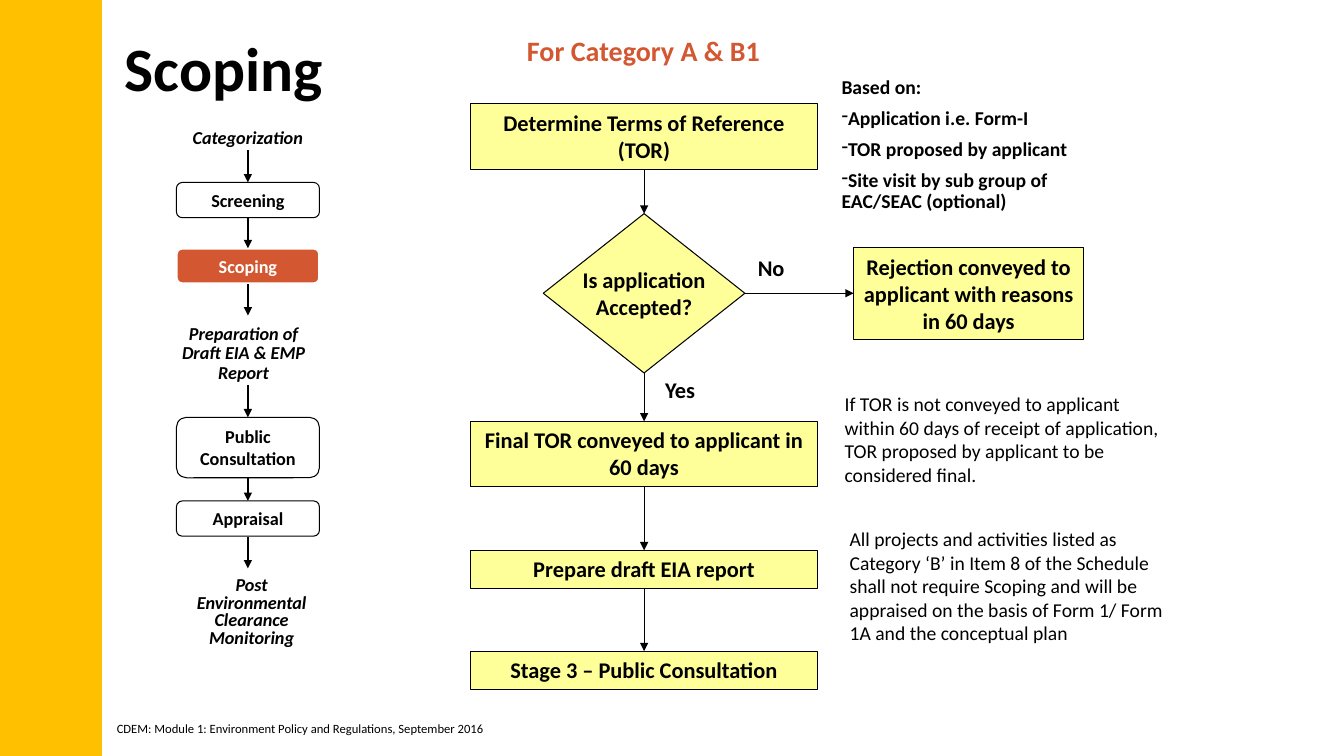
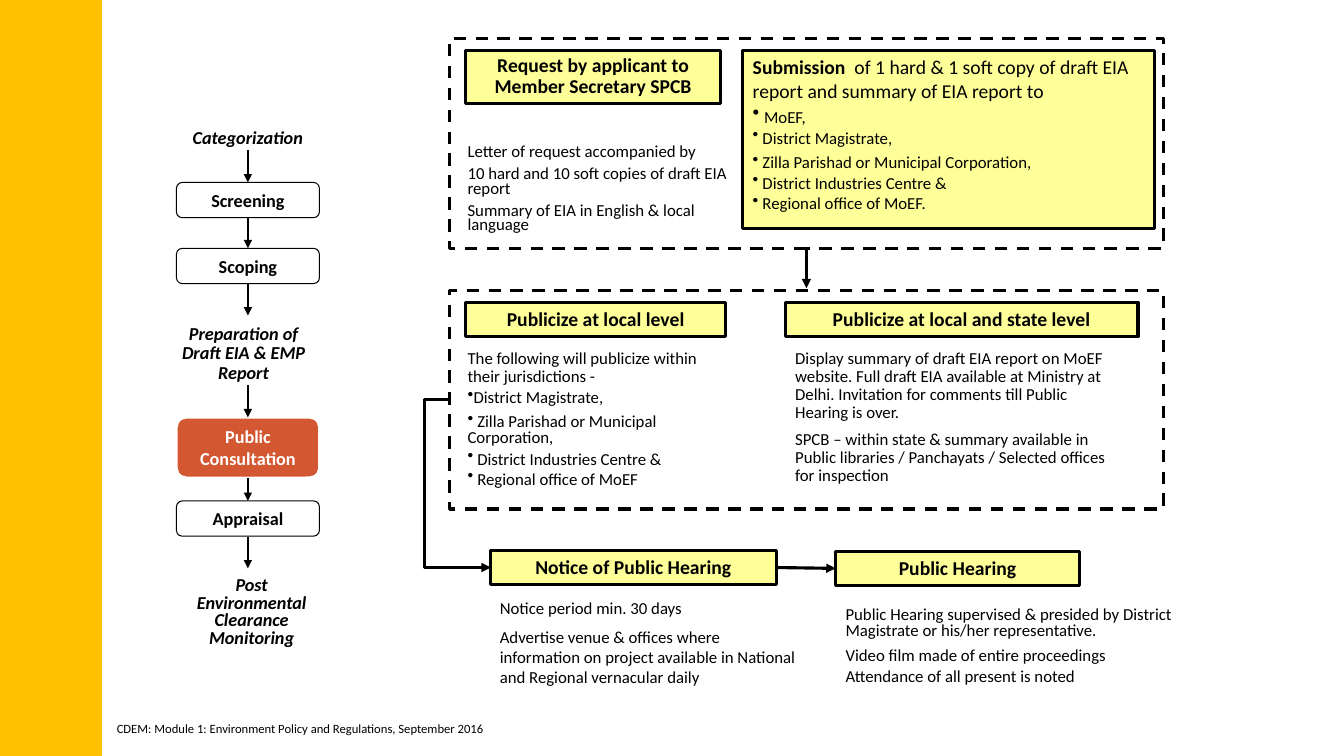
"""Build two slides on scoping and public consultation for clearance."""
from dataclasses import dataclass, replace
from itertools import pairwise
from typing import Any

from lxml.etree import SubElement as Sub
from pptx import Presentation
from pptx.dml.color import RGBColor as Rgb
from pptx.enum.dml import MSO_LINE as Dash
from pptx.enum.shapes import MSO_CONNECTOR as Link, MSO_SHAPE as Kind
from pptx.enum.text import MSO_ANCHOR as Anchor, PP_ALIGN as Align
from pptx.oxml.ns import qn
from pptx.util import Pt

HUES = {"ink": "000000", "white": "FFFFFF", "gold": "FFC000",
        "rust": "D35731", "pale": "FFFF99"}
FONT = "Calibri"


@dataclass(frozen=True)
class Look:
    size: float
    bold: bool = False
    italic: bool = False
    hue: str = "ink"
    align: Any = Align.LEFT


@dataclass(frozen=True)
class Skin:
    fill: str = ""
    edge: str = ""
    width: float = 0.75
    dash: Any = None


@dataclass(frozen=True)
class Lead:
    text: str
    size: float
    bold: bool = False


@dataclass(frozen=True)
class Para:
    text: str
    pitch: float = 1.0
    mark: str = ""
    lead: Lead | None = None
    size: float = 0


@dataclass(frozen=True)
class Box:
    left: float
    top: float
    width: float
    height: float

    @property
    def base(self) -> float:
        return self.top + self.height

    @property
    def right(self) -> float:
        return self.left + self.width

    @property
    def mid(self) -> float:
        return self.left + self.width / 2

    def lay(self) -> list[Pt]:
        return [Pt(v) for v in (self.left, self.top, self.width, self.height)]


@dataclass(frozen=True)
class Step:
    text: str
    box: Box
    pitch: float = 1.0
    plain: bool = False


NODE = Look(16, bold=True, align=Align.CENTER)
HEAD = replace(NODE, size=14)
STEP = replace(NODE, size=13)
NOTE = Look(14)
TINY = Look(12)
CLEAR = Skin()
THIN = Skin("pale", "ink")
THICK = Skin("pale", "ink", 2.25)
FRAME = Skin("", "ink", 2.25, Dash.DASH)
RING = Skin("", "ink")
HOT = Skin("rust", "white", 1.75)

STEPS = [
    Step("Categorization", Box(120, 88.6, 114, 22.3), 0.8, True),
    Step("Screening", Box(126, 130.3, 102.2, 25.2)),
    Step("Scoping", Box(126, 177.4, 102.2, 25.2)),
    Step("Preparation of Draft EIA & EMP Report", Box(120, 225.4, 108, 55.4), 0.9, True),
    Step("Public Consultation", Box(126, 298.1, 102.2, 43.2)),
    Step("Appraisal", Box(126, 357.8, 102.2, 25.2)),
    Step("Post Environmental Clearance Monitoring", Box(120, 406, 119.5, 64), 0.8, True),
]
STEMS = [(107.3, 130.3), (155.5, 177.3), (203, 225.4), (275, 298.1),
         (341.3, 357.8), (383.8, 406)]


def tint(name: str) -> Rgb:
    return Rgb.from_string(HUES[name])


def apply(item: Any, **form: Any) -> None:
    for key, val in form.items():
        setattr(item, key, val)


def write(frame: Any, paras: list[Para], look: Look) -> None:
    for num, para in enumerate(paras):
        line = frame.paragraphs[0] if num == 0 else frame.add_paragraph()
        size = para.size or look.size
        runs = [Lead(para.text, size, look.bold)]
        if para.lead:
            runs.insert(0, para.lead)
        apply(line, alignment=look.align, line_spacing=para.pitch,
              space_before=Pt(runs[0].size / 2 if num else 0))
        if para.mark:
            Sub(line._p.get_or_add_pPr(), qn("a:buChar"), char=para.mark)
        for part in runs:
            run = line.add_run()
            run.text = part.text
            apply(run.font, name=FONT, size=Pt(part.size), bold=part.bold,
                  italic=look.italic)
            run.font.color.rgb = tint(look.hue)


def label(slide: Any, box: Box, paras: list[Para], look: Look, wrap: bool = True) -> Any:
    shape = slide.shapes.add_textbox(*box.lay())
    shape.text_frame.word_wrap = wrap
    write(shape.text_frame, paras, look)
    return shape


def block(slide: Any, box: Box, skin: Skin, paras: list[Para], look: Look = NODE,
          kind: Any = Kind.RECTANGLE, anchor: Any = Anchor.TOP, wrap: bool = True) -> Any:
    shape = slide.shapes.add_shape(kind, *box.lay())
    shape.shadow.inherit = False
    if skin.fill:
        shape.fill.solid()
        shape.fill.fore_color.rgb = tint(skin.fill)
    else:
        shape.fill.background()
    if skin.edge:
        shape.line.color.rgb = tint(skin.edge)
        apply(shape.line, width=Pt(skin.width), dash_style=skin.dash)
    else:
        shape.line.fill.background()
    apply(shape.text_frame, word_wrap=wrap, vertical_anchor=anchor)
    write(shape.text_frame, paras, look)
    return shape


def arrow(slide: Any, start: tuple[float, float], end: tuple[float, float],
          width: float = 0.75, bend: int | None = None) -> None:
    kind = Link.STRAIGHT if bend is None else Link.ELBOW
    link = slide.shapes.add_connector(kind, *(Pt(v) for v in start + end))
    link.line.color.rgb = tint("ink")
    link.line.width = Pt(width)
    props = link.element.spPr
    Sub(props.find(qn("a:ln")), qn("a:tailEnd"), type="triangle")
    Sub(props, qn("a:effectLst"))
    if bend is not None:
        geom = props.find(qn("a:prstGeom"))
        vals = geom.find(qn("a:avLst"))
        if vals is None:
            vals = Sub(geom, qn("a:avLst"))
        Sub(vals, qn("a:gd"), name="adj1", fmla=f"val {bend}")


def brand(deck: Any, slide: Any) -> None:
    foot = "CDEM: Module 1: Environment Policy and Regulations, September 2016"
    parts = [
        block(slide, Box(0, 0, 72.7, 540), Skin("gold"), []),
        label(slide, Box(76.3, 511.2, 281.5, 18), [Para(foot)], Look(9), wrap=False),
    ]
    tree = deck.slide_master.shapes.element
    for num, part in enumerate(parts, 2):
        tree.insert(num, part.element)


def track(slide: Any, stage: str) -> None:
    for step in STEPS:
        skin, look = RING, STEP
        if step.plain:
            skin, look = CLEAR, replace(STEP, italic=True)
        elif step.text == stage:
            skin, look = HOT, replace(STEP, hue="white")
        block(slide, step.box, skin, [Para(step.text, step.pitch)], look,
              Kind.ROUNDED_RECTANGLE)
    for top, base in STEMS:
        arrow(slide, (177.1, top), (177.1, base), 1)


def scope(slide: Any) -> None:
    title = slide.shapes.title
    apply(title, **dict(zip(("left", "top", "width", "height"),
                            Box(82, 4.3, 612, 86.4).lay())))
    title.text_frame.vertical_anchor = Anchor.MIDDLE
    write(title.text_frame, [Para("Scoping")], Look(44, bold=True))
    label(slide, Box(343.4, 20.2, 232.6, 31.7), [Para("For Category A & B1")],
          replace(NODE, size=20, hue="rust"))

    test = Box(388.1, 152.6, 144, 113.8)
    flow = [("Determine Terms of Reference (TOR)", 74.2, 46.8),
            ("Final TOR conveyed to applicant in 60 days", 301, 46.8),
            ("Prepare draft EIA report", 393.1, 27.4),
            ("Stage 3 – Public Consultation", 465.1, 27.4)]
    nodes = [Box(336.2, top, 247.7, height) for _, top, height in flow]
    for (text, _, _), box in zip(flow, nodes):
        block(slide, box, THIN, [Para(text)])
    block(slide, test, THIN, [Para("Is application")], NODE, Kind.FLOWCHART_DECISION,
          Anchor.MIDDLE, False)
    ask = slide.shapes[-1].text_frame.add_paragraph()
    ask.alignment = Align.CENTER
    run = ask.add_run()
    run.text = "Accepted?"
    apply(run.font, name=FONT, size=Pt(NODE.size), bold=True)
    run.font.color.rgb = tint("ink")
    for one, two in pairwise([nodes[0], test, *nodes[1:]]):
        arrow(slide, (test.mid, one.base), (test.mid, two.top))

    deny = Box(609.8, 177.1, 164.2, 65.5)
    block(slide, deny, THIN,
          [Para("Rejection conveyed to applicant with reasons in 60 days")])
    arrow(slide, (test.right, 209.5), (deny.left, 209.5))
    for text, left, top in (("Yes", 468, 265), ("No", 534.2, 177.8)):
        label(slide, Box(left, top, 54, 26.6), [Para(text)], Look(16, bold=True))
    basis = ["Application i.e. Form-I", "TOR proposed by applicant",
             "Site visit by sub group of EAC/SEAC (optional)"]
    label(slide, Box(594, 51.8, 210.2, 108.7),
          [Para("Based on:", 0.9)] + [Para(text, 0.9, "-") for text in basis],
          Look(14, bold=True))
    label(slide, Box(596.2, 276.5, 244.1, 74.9),
          [Para("If TOR is not conveyed to applicant within 60 days of receipt of "
                "application, TOR proposed by applicant to be considered final.")], NOTE)
    label(slide, Box(599.8, 373, 239.8, 92.2),
          [Para("All projects and activities listed as Category ‘B’ in Item 8 of the "
                "Schedule shall not require Scoping and will be appraised on the basis "
                "of Form 1/ Form 1A and the conceptual plan")], NOTE)


def consult(slide: Any) -> None:
    for top, height in ((27.4, 149.8), (207.4, 156.2)):
        block(slide, Box(321.1, top, 509.8, height), FRAME, [])
    heads = [
        (Box(332.6, 36, 182.2, 38.2), "Request by applicant to Member Secretary SPCB", 0.9),
        (Box(332.6, 216, 185.8, 24.5), "Publicize at local level", 1.0),
        (Box(560.9, 216, 252, 24.5), "Publicize at local and state level", 1.0),
        (Box(350.6, 393.1, 203.8, 24.5), "Notice of Public Hearing", 1.0),
        (Box(596.9, 393.8, 174.2, 24.5), "Public Hearing", 1.0),
    ]
    for box, text, pitch in heads:
        block(slide, box, THICK, [Para(text, pitch)], HEAD)
    local = [Para(" Zilla Parishad or Municipal Corporation,", 0.8, "•"),
             Para(" District Industries Centre &", 0.6, "•")]
    block(slide, Box(530.6, 36, 293.8, 127.4), THICK, [
        Para(" of 1 hard & 1 soft copy of draft EIA report and summary of EIA report to",
             lead=Lead("Submission ", 14, True), size=14),
        Para("MoEF,", 0.6, "•", Lead(" ", 14)),
        Para(" District Magistrate,", 0.6, "•"),
        *local,
        Para(" Regional office of MoEF.", 0.6, "•")], TINY)
    notes = [
        (Box(326.9, 100.8, 203.8, 72.7), [
            Para("Letter of request accompanied by", 0.7),
            Para("10 hard and 10 soft copies of draft EIA report", 0.7),
            Para("Summary of EIA in English & local language", 0.7)]),
        (Box(326.9, 246.2, 198, 110.9), [
            Para("The following will publicize within their jurisdictions -", 0.9),
            Para("District Magistrate,", 0.6, "•"),
            *local,
            Para(" Regional office of MoEF", 0.6, "•")]),
        (Box(560.9, 246.2, 239.8, 105.8), [
            Para("Display summary of draft EIA report on MoEF website. Full draft EIA "
                 "available at Ministry at Delhi. Invitation for comments till Public "
                 "Hearing is over.", 0.9),
            Para("SPCB – within state & summary available in Public libraries / "
                 "Panchayats / Selected offices for inspection", 0.9)]),
        (Box(349.9, 423.4, 229, 72), [
            Para("Notice period min. 30 days"),
            Para("Advertise venue & offices where information on project available "
                 "in National and Regional vernacular daily")]),
        (Box(596.9, 430.6, 252, 64.8), [
            Para("Public Hearing supervised & presided by District Magistrate or "
                 "his/her representative.", 0.8),
            Para("Video film made of entire proceedings", 0.8),
            Para("Attendance of all present is noted", 0.6)]),
    ]
    for box, paras in notes:
        label(slide, box, paras, TINY)
    arrow(slide, (576, 178.6), (576, 205.9), 2.25)
    arrow(slide, (321.1, 285.1), (350.6, 405.4), 2.25, -60000)
    arrow(slide, (555.1, 405.4), (596.9, 406), 2.25)


def main() -> None:
    deck = Presentation()
    apply(deck, slide_width=Pt(960), slide_height=Pt(540))
    first = deck.slides.add_slide(deck.slide_layouts[5])
    brand(deck, first)
    scope(first)
    track(first, "Scoping")
    second = deck.slides.add_slide(deck.slide_layouts[6])
    track(second, "Public Consultation")
    consult(second)
    deck.save("out.pptx")


if __name__ == "__main__":
    main()
